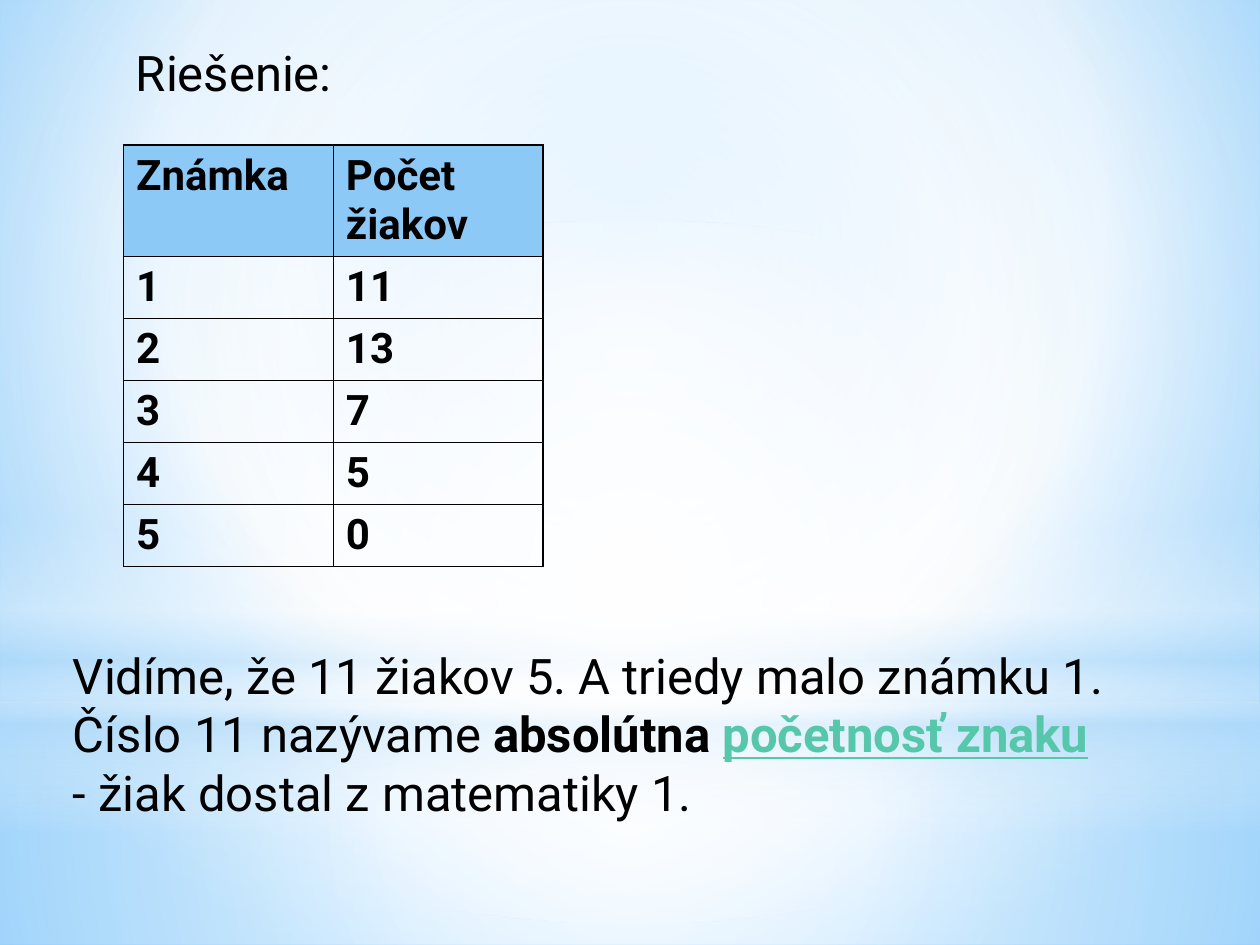
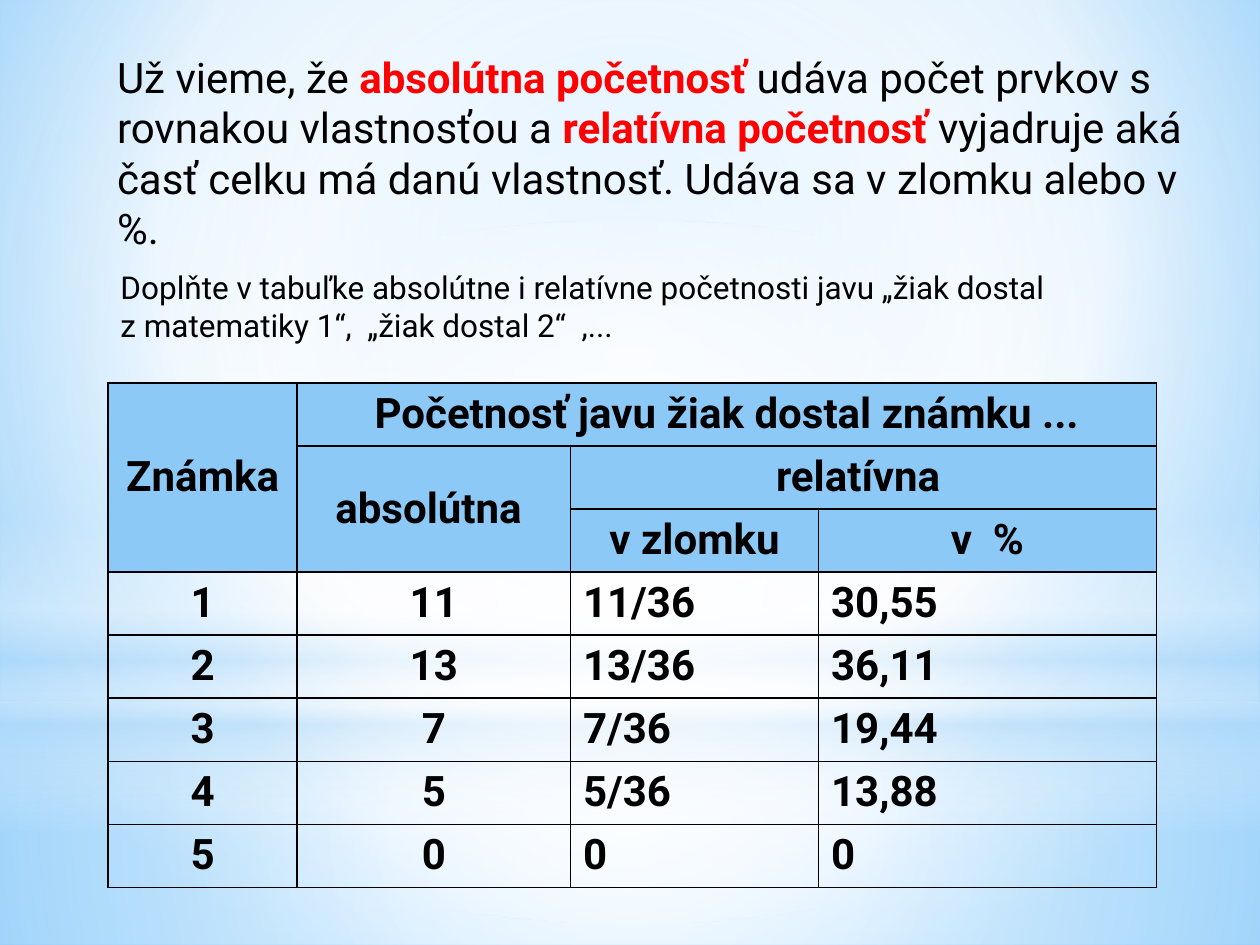
from lxml import etree
from pptx import Presentation
from pptx import util as u
from pptx.dml import color
from pptx.enum import shapes, text
from pptx.oxml import ns

WHITE, BLACK, RED, GREEN = "FFFFFF", "000000", "FF0000", "56C7AA"
SKY, HEADER = "B4DCFA", "8CC9F7"
WIDTH, HEIGHT, HORIZON = 25.4, 19.05, 14.17
MIDDLE = (50, 50, 50, 50)
BACKDROP = [(0, "9ED5FF", 100), (60, WHITE, 100), (100, "5BB9FF", 100)]
BANDS = [
    ("RECTANGLE", HORIZON, HEIGHT - HORIZON,
     [(0, WHITE, 91), (37, WHITE, 76), (100, SKY, 79)], MIDDLE),
    ("RECTANGLE", 0, HORIZON,
     [(0, WHITE, 89), (48, WHITE, 62), (100, SKY, 79)], MIDDLE),
    ("RECTANGLE", 10.46, 6.35,
     [(0, WHITE, 0), (29, WHITE, 30), (45, SKY, 40),
      (55, WHITE, 26), (65, SKY, 60), (100, WHITE, 0)], None),
    ("OVAL", 4.45, HORIZON, [(0, WHITE, 100), (56, WHITE, 0)], MIDDLE),
]
MARKS = [("1", "11", "11/36", "30,55"), ("2", "13", "13/36", "36,11"),
         ("3", "7", "7/36", "19,44"), ("4", "5", "5/36", "13,88"),
         ("5", "0", "0", "0")]


def rgb(value):
    return color.RGBColor.from_string(value)


def child(parent, tag, **attributes):
    values = {name: str(value) for name, value in attributes.items()}
    return etree.SubElement(parent, ns.qn(tag), values)


def add_span(para, words, size=24, hue=BLACK, bold=False, underline=False):
    span = para.add_run()
    span.text = words
    font = span.font
    font.name, font.size, font.bold = "Roboto", u.Pt(size), bold
    font.color.rgb = rgb(hue)
    if underline:
        font.underline = True


def paint_gradient(fill, element, stops, focus):
    fill.gradient()
    gradient = element.xpath(".//a:gradFill")[0]
    for part in list(gradient):
        gradient.remove(part)
    stop_list = child(gradient, "a:gsLst")
    for position, hue, opacity in stops:
        stop = child(stop_list, "a:gs", pos=position * 1000)
        tint = child(stop, "a:srgbClr", val=hue)
        if opacity < 100:
            child(tint, "a:alpha", val=opacity * 1000)
    if focus is None:
        child(gradient, "a:lin", ang=5400000, scaled=0)
    else:
        circle = child(gradient, "a:path", path="circle")
        sides = {side: share * 1000 for side, share in zip("ltrb", focus)}
        child(circle, "a:fillToRect", **sides)


def draw_borders(cell):
    properties = cell._tc.get_or_add_tcPr()
    for index, tag in enumerate(("a:lnL", "a:lnR", "a:lnT", "a:lnB")):
        line = child(properties, tag, w=u.Pt(1))
        child(child(line, "a:solidFill"), "a:srgbClr", val=BLACK)
        properties.insert(index, line)


class Lesson:
    def __init__(self):
        self.deck = Presentation()
        self.deck.slide_width = u.Cm(WIDTH)
        self.deck.slide_height = u.Cm(HEIGHT)
        self.page = None

    def add_page(self):
        self.page = self.deck.slides.add_slide(self.deck.slide_layouts[6])
        paint_gradient(self.page.background.fill, self.page.element,
                       BACKDROP, (20, 10, 20, 60))
        for kind, top, height, stops, focus in BANDS:
            band = self.page.shapes.add_shape(
                shapes.MSO_SHAPE[kind], 0, u.Cm(top), u.Cm(WIDTH), u.Cm(height))
            band.shadow.inherit = False
            band.line.fill.background()
            paint_gradient(band.fill, band.element, stops, focus)

    def add_text(self, left, top, width, height, lines, size):
        box = self.page.shapes.add_textbox(
            u.Cm(left), u.Cm(top), u.Cm(width), u.Cm(height))
        frame = box.text_frame
        frame.word_wrap = True
        for index, spans in enumerate(lines):
            para = frame.add_paragraph() if index else frame.paragraphs[0]
            for words, style in spans:
                add_span(para, words, size=size, **style)

    def add_table(self, left, top, widths, heights, rows,
                  header_rows=1, centred=0, merges=()):
        frame = self.page.shapes.add_table(
            len(heights), len(widths), u.Cm(left), u.Cm(top),
            u.Cm(sum(widths)), u.Cm(sum(heights)))
        table = frame.table
        table.first_row = table.horz_banding = False
        for column, width in zip(table.columns, widths):
            column.width = u.Cm(width)
        for row, height in zip(table.rows, heights):
            row.height = u.Cm(height)
        for start, end in merges:
            table.cell(*start).merge(table.cell(*end))
        for row_index, row in enumerate(rows):
            is_header = row_index < header_rows
            for column_index, words in enumerate(row):
                cell = table.cell(row_index, column_index)
                if is_header:
                    cell.fill.solid()
                    cell.fill.fore_color.rgb = rgb(HEADER)
                else:
                    cell.fill.background()
                draw_borders(cell)
                if not words:
                    continue
                para = cell.text_frame.paragraphs[0]
                add_span(para, words, bold=True)
                if centred and (is_header or column_index < centred):
                    para.alignment = text.PP_ALIGN.CENTER
                if centred and is_header:
                    cell.vertical_anchor = text.MSO_ANCHOR.MIDDLE


def add_solution(lesson):
    lesson.add_page()
    lesson.add_table(2.49, 2.92, [4.23] * 2, [2.25] + [1.25] * len(MARKS),
                     [("Známka", "Počet žiakov")] + [mark[:2] for mark in MARKS])
    lesson.add_text(1.22, 12.88, 22.61, 3.84, [
        [("Vidíme, že 11 žiakov 5. A triedy malo známku 1.", {})],
        [("Číslo 11 nazývame ", {}),
         ("absolútna ", {"bold": True}),
         ("početnosť znaku", {"hue": GREEN, "bold": True, "underline": True})],
        [("- žiak dostal z matematiky 1.", {})],
    ], size=28)
    lesson.add_text(2.49, 0.74, 4.6, 1.45, [[("Riešenie:", {})]], size=28)


def add_frequencies(lesson):
    lesson.add_page()
    header = [
        ("Známka", "Početnosť javu žiak dostal známku ...", "", ""),
        ("", "absolútna ", "relatívna ", ""),
        ("", "", "v zlomku", "v  %"),
    ]
    rows = header + MARKS
    lesson.add_table(
        2.18, 7.72, [3.81, 5.51, 5, 6.81], [1.27] * len(rows), rows,
        header_rows=len(header), centred=2,
        merges=[((0, 0), (2, 0)), ((0, 1), (0, 3)),
                ((1, 1), (2, 1)), ((1, 2), (1, 3))])
    term = {"hue": RED, "bold": True}
    lesson.add_text(2.11, 0.91, 22.2, 4.37, [[
        ("Už vieme, že ", {}),
        ("absolútna početnosť ", term),
        ("udáva počet prvkov s rovnakou vlastnosťou a ", {}),
        ("relatívna početnosť ", term),
        ("vyjadruje aká časť celku má danú vlastnosť. "
         "Udáva sa v zlomku alebo v %.", {}),
    ]], size=24)
    lesson.add_text(2.18, 5.28, 21.49, 1.8, [
        [("Doplňte v tabuľke absolútne i relatívne početnosti javu "
          "„žiak dostal", {})],
        [("z matematiky 1“,  „žiak dostal 2“  ,...", {})],
    ], size=18)


def main():
    lesson = Lesson()
    add_solution(lesson)
    add_frequencies(lesson)
    lesson.deck.save("out.pptx")


if __name__ == "__main__":
    main()
